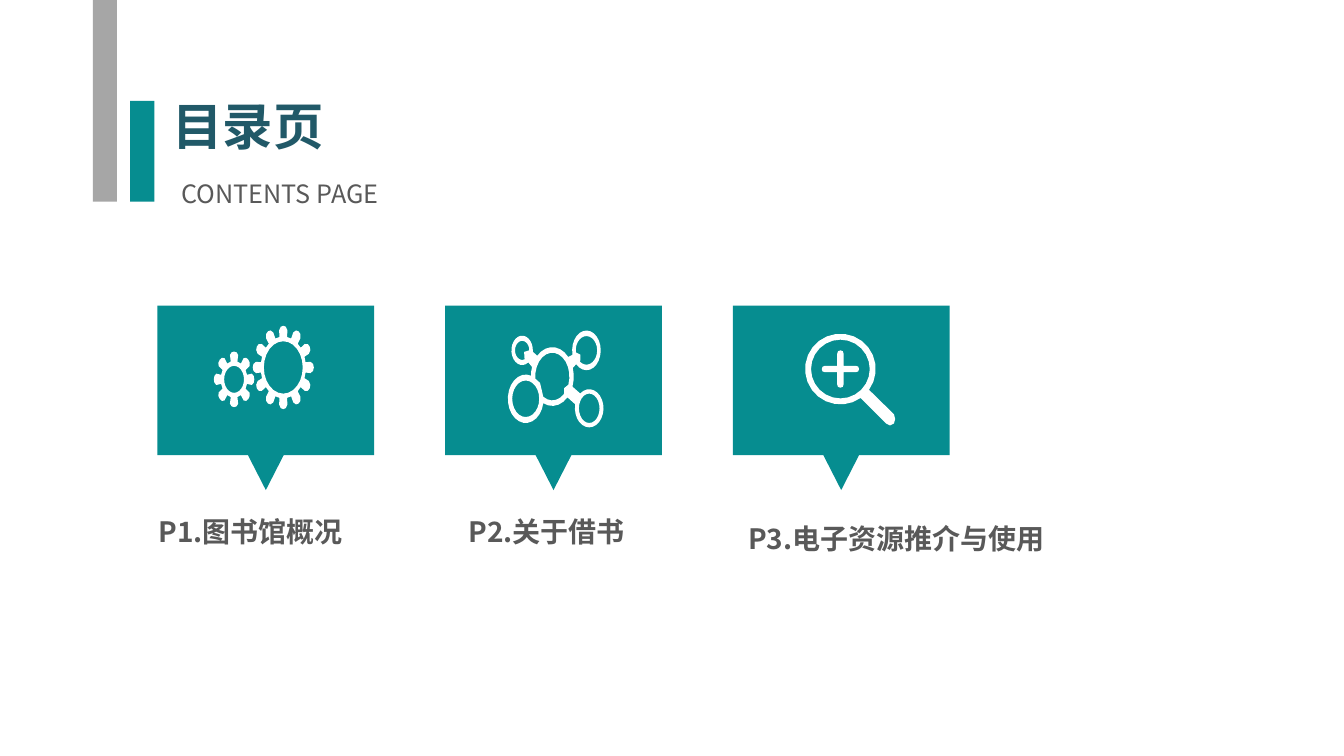
import math

import lxml.etree
import pptx
import pptx.dml.color
import pptx.enum.shapes
import pptx.enum.text
import pptx.oxml.ns
import pptx.util

Cm = pptx.util.Cm

COLORS = {
    "teal": "068D90",
    "gray": "A6A6A6",
    "navy": "215968",
    "text": "595959",
    "white": "FFFFFF",
}
FONT = "Noto Sans CJK SC"


def rgb(name):
    return pptx.dml.color.RGBColor.from_string(COLORS[name])


def write_text(tf, text, size, color="text", bold=False, spacing=None):
    tf.word_wrap = True
    tf.auto_size = pptx.enum.text.MSO_AUTO_SIZE.SHAPE_TO_FIT_TEXT
    tf.vertical_anchor = pptx.enum.text.MSO_ANCHOR.TOP
    p = tf.paragraphs[0]
    p.alignment = pptx.enum.text.PP_ALIGN.CENTER
    if spacing:
        p.line_spacing = spacing
    r = p.add_run()
    r.text = text
    r.font.size = pptx.util.Pt(size)
    r.font.bold = bold
    r.font.name = FONT
    r.font.color.rgb = rgb(color)
    ea = lxml.etree.SubElement(r.font._element, pptx.oxml.ns.qn("a:ea"))
    ea.set("typeface", FONT)


def arc(center, radii, start=0, end=360):
    """Points on an ellipse, clockwise from start to end in degrees."""
    (cx, cy), (rx, ry) = center, radii
    n = max(1, math.ceil((end - start) / 15))
    angles = [math.radians(start + (end - start) * i / n) for i in range(n + 1)]
    return [(cx + rx * math.cos(a), cy + ry * math.sin(a)) for a in angles]


class Deck:
    """Holds the presentation, its style and the current slide."""

    def __init__(self, width, height):
        self.prs = pptx.Presentation()
        self.prs.slide_width = Cm(width)
        self.prs.slide_height = Cm(height)

    def add_slide(self):
        self.s = self.prs.slides.add_slide(self.prs.slide_layouts[5])

    def title(self, text, x, y, w, h, **fmt):
        sp = self.s.shapes.title
        sp.left, sp.top, sp.width, sp.height = map(Cm, (x, y, w, h))
        write_text(sp.text_frame, text, **fmt)

    def text(self, text, x, y, w, h, **fmt):
        sp = self.s.shapes.add_textbox(*map(Cm, (x, y, w, h)))
        write_text(sp.text_frame, text, **fmt)

    def paint(self, sp, fill):
        sp.shadow.inherit = False
        sp.fill.solid()
        sp.fill.fore_color.rgb = rgb(fill)
        sp.line.fill.background()

    def bar(self, x, y, w, h, fill):
        kind = pptx.enum.shapes.MSO_SHAPE.RECTANGLE
        self.paint(self.s.shapes.add_shape(kind, *map(Cm, (x, y, w, h))), fill)

    def outline(self, contours, fill="white"):
        """Draw closed contours as one shape; inner ones become holes."""
        builder = None
        for contour in contours:
            start, *rest = [(Cm(x), Cm(y)) for x, y in contour]
            if builder is None:
                builder = self.s.shapes.build_freeform(*start)
            else:
                builder.move_to(*start)
            builder.add_line_segments(rest, close=True)
        self.paint(builder.convert_to_shape(), fill)

    def callout(self, x, y, w, h, tip):
        mid, half = x + w / 2, 0.45
        self.outline([[(x, y), (x + w, y), (x + w, y + h), (mid + half, y + h),
                       (mid, y + h + tip), (mid - half, y + h), (x, y + h)]], "teal")

    def gear(self, center, radii, hole, teeth, root):
        """Root is the share of the radius between two teeth."""
        (cx, cy), (rx, ry) = center, radii
        side = [(0.32, root), (0.29, 0.9), (0.16, 0.98)]
        tooth = [(-t, k) for t, k in side] + [(0, 1)] + side[::-1]
        rim = []
        for i in range(teeth):
            for t, k in tooth:
                a = 2 * math.pi * (i + t) / teeth
                rim.append((cx + k * rx * math.cos(a), cy + k * ry * math.sin(a)))
        self.outline([rim, arc(center, hole)])

    def molecule(self):
        core, low_left, top_left = (13.92, 9.49), (13.25, 10.05), (13.16, 8.83)
        top_right, low_right = (14.78, 8.83), (14.85, 10.29)
        core_r, low_left_r = (0.54, 0.74), (0.45, 0.61)
        # Arcs of the outer edge; the gaps between them are the bonds
        edge = [
            (top_left, (0.27, 0.37), 55, 365),
            (core, core_r, 225, 318),
            (top_right, (0.36, 0.5), 167, 496),
            (core, core_r, 343, 380),
            (low_right, (0.36, 0.48), 231, 552),
            (core, core_r, 45, 115),
            (low_left, low_left_r, 10, 288),
            (core, core_r, 190, 199),
        ]
        core_hole = (0.43, 0.6)
        self.outline([
            [point for part in edge for point in arc(*part)],
            arc(core, core_hole, 175, 380) + [(14.22, 9.78), (14.22, 9.91)]
            + arc(core, core_hole, 50, 122) + [(13.61, 9.65)],
            arc(low_left, (0.34, 0.46)),
            arc(top_left, (0.18, 0.24), 70, 360) + [(13.21, 8.87)],
            arc(top_right, (0.27, 0.36), 172, 488) + [(14.63, 9.07), (14.63, 8.94)],
            arc(low_right, (0.26, 0.37)),
        ])

    def magnifier(self, cx, cy):
        handle = [(1.35, 1.14), (1.38, 1.26), (1.35, 1.37), (1.25, 1.42), (1.15, 1.37)]
        self.outline([
            arc((cx, cy), (0.89, 0.89), 55, 396) + [(cx + x, cy + y) for x, y in handle],
            arc((cx, cy), (0.74, 0.74)),
        ])
        # Plus sign: one arm turned four times
        arm = [(0.08, -0.08), (0.39, -0.08), (0.45, -0.06),
               (0.47, 0), (0.45, 0.06), (0.39, 0.08)]
        plus = []
        for _ in range(4):
            plus += [(cx + x, cy + y) for x, y in arm]
            arm = [(-y, x) for x, y in arm]
        self.outline([plus])


def main():
    deck = Deck(33.87, 19.05)
    deck.add_slide()

    # Heading
    deck.bar(2.34, 0, 0.61, 5.08, "gray")
    deck.bar(3.28, 2.54, 0.61, 2.54, "teal")
    deck.title("目录页", 3.97, 2.26, 4.55, 1.8, size=36, color="navy", bold=True)
    deck.text("CONTENTS PAGE", 4.17, 4.37, 5.77, 1.02, size=18)

    # Callouts and their labels
    labels = [
        ("P1.图书馆概况", 2.56, 7.52, 1.96, None),
        ("P2.关于借书", 9.41, 8.74, 1.12, None),
        ("P3.电子资源推介与使用", 17.63, 9.93, 1.3, 1.2),
    ]
    for i, (label, x, w, h, spacing) in enumerate(labels):
        deck.callout(3.97 + 7.25 * i, 7.7, 5.46, 3.77, 0.88)
        deck.text(label, x, 12.85, w, h, size=20, bold=True, spacing=spacing)

    # Icons
    deck.gear((7.14, 9.26), (0.77, 1.05), (0.49, 0.66), teeth=12, root=0.74)
    deck.gear((5.9, 9.56), (0.51, 0.7), (0.25, 0.34), teeth=8, root=0.66)
    deck.magnifier(21.18, 9.3)
    deck.molecule()

    deck.prs.save("out.pptx")


if __name__ == "__main__":
    main()
